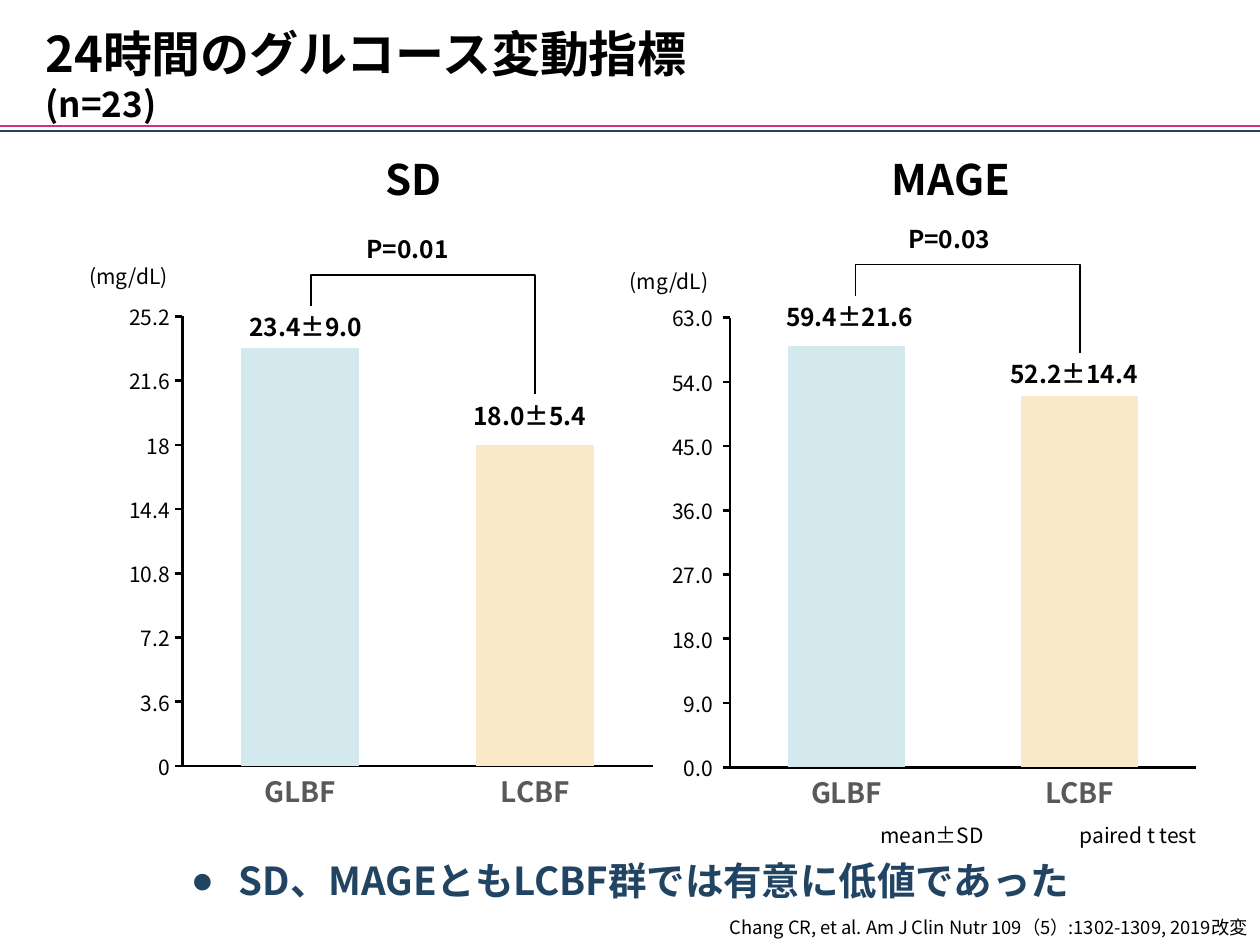
from lxml import etree
from pptx import Presentation
from pptx.chart.data import CategoryChartData
from pptx.dml.color import RGBColor
from pptx.enum.chart import XL_CHART_TYPE, XL_TICK_MARK
from pptx.enum.shapes import MSO_CONNECTOR
from pptx.enum.text import MSO_ANCHOR, MSO_AUTO_SIZE, PP_ALIGN
from pptx.oxml import parse_xml
from pptx.oxml.ns import nsdecls, qn
from pptx.util import Inches, Pt

COLUMN = XL_CHART_TYPE.COLUMN_CLUSTERED
NO_TICK, TICK_OUT = XL_TICK_MARK.NONE, XL_TICK_MARK.OUTSIDE
STRAIGHT, ELBOW = MSO_CONNECTOR.STRAIGHT, MSO_CONNECTOR.ELBOW
LEFT, CENTER, RIGHT = PP_ALIGN.LEFT, PP_ALIGN.CENTER, PP_ALIGN.RIGHT
TOP, MIDDLE = MSO_ANCHOR.TOP, MSO_ANCHOR.MIDDLE
FIT = MSO_AUTO_SIZE.SHAPE_TO_FIT_TEXT

# Content
FONT = "Noto Sans CJK JP"
BLACK, NAVY, PINK, GREY = "000000", "224463", "D82B83", "595959"
BAR_COLORS = ["D4E9EE", "F9E9C8"]
GROUPS = ["GLBF", "LCBF"]
TITLE = [("24時間のグルコース変動指標", 28), ("(n=23)", 20)]
MESSAGE = "SD、MAGEともLCBF群では有意に低値であった"
SOURCE = "Chang CR, et al. Am J Clin Nutr 109（5）:1302-1309, 2019改変"
NOTES = [("mean±SD", 6.89, 1.03), ("paired t test", 8.47, 1.2)]

# "plot" is the left edge and width of the plot area as shares of the chart;
# "labels" are the value labels with their top edges
PANELS = [
    dict(name="SD", name_at=(2.96, 0.69), chart_at=(0.94, 2.3), plot=(0.117, 0.863),
         values=[23.4, 18], top=25.2, step=3.6, fmt="General",
         labels=[("23.4±9.0", 2.43), ("18.0±5.4", 3.13)], label_x=1.88, label_w=1.17,
         p="P=0.01", p_at=(2.81, 1.81), unit_at=(0.61, 2.04)),
    dict(name="MAGE", name_at=(6.98, 1.23), chart_at=(5.24, 2.31), plot=(0.128, 0.854),
         values=[59, 52], top=63, step=9, fmt=r"#,##0.0_);[Red]\(#,##0.0\)",
         labels=[("59.4±21.6", 2.35), ("52.2±14.4", 2.8)], label_x=6.14, label_w=1.3,
         p="P=0.03", p_at=(7.11, 1.73), unit_at=(4.9, 2.08)),
]
CHART_W, CHART_H = 4.33, 4.22
PLOT_Y, PLOT_H = 0.05, 0.846
BAR_GAP = 1.78       # distance between the two value labels
BRACKET_RISE = 0.25  # height of the bracket above the first label


def rgb(value):
    return RGBColor.from_string(value)


def style(font, size, color=BLACK, bold=False):
    font.size, font.bold = Pt(size), bold
    font.color.rgb = rgb(color)
    font.name = FONT
    etree.SubElement(font._rPr, qn("a:ea")).set("typeface", FONT)


def add_run(p, text, *look):
    r = p.add_run()
    r.text = text
    style(r.font, *look)


def place(shape, x, y, w, h):
    shape.left, shape.top, shape.width, shape.height = map(Inches, (x, y, w, h))


def set_frame(tf, wrap, anchor=TOP, align=LEFT):
    tf.word_wrap, tf.auto_size, tf.vertical_anchor = wrap, FIT, anchor
    p = tf.paragraphs[0]
    p.alignment = align
    p.space_before = Pt(0)
    return p


def add_text(s, text, x, y, w, h, size, bold=False, wrap=False, align=LEFT):
    tf = s.shapes.add_textbox(*map(Inches, (x, y, w, h))).text_frame
    add_run(set_frame(tf, wrap, align=align), text, size, BLACK, bold)


def add_line(s, kind, x1, y1, x2, y2, color, width):
    line = s.shapes.add_connector(kind, *map(Inches, (x1, y1, x2, y2)))
    line.line.color.rgb = rgb(color)
    line.line.width = Pt(width)
    etree.SubElement(line._element.spPr, qn("a:effectLst"))
    return line


def add_bracket(s, x, y1, y2):
    """Elbow turned by 270 degrees, rising above both of its ends."""
    drop = y2 - y1
    cx, cy = x + BAR_GAP / 2, (y1 + y2) / 2
    line = add_line(s, ELBOW, cx + drop / 2, cy - BAR_GAP / 2,
                    cx - drop / 2, cy + BAR_GAP / 2, BLACK, 1)
    line._element.spPr.find(qn("a:xfrm")).set("rot", str(270 * 60000))
    line._element.spPr.find(qn("a:prstGeom")).get_or_add_avLst()
    guides = line._element.spPr.find(qn("a:prstGeom")).find(qn("a:avLst"))
    gd = etree.SubElement(guides, qn("a:gd"))
    gd.set("name", "adj1")
    gd.set("fmla", f"val {round(-BRACKET_RISE / drop * 100000)}")


def set_plot_area(chart, x, w):
    area = chart._chartSpace.chart.plotArea
    for old in area.findall(qn("c:layout")):
        area.remove(old)
    sizes = "".join(f'<c:{k} val="{v}"/>' for k, v in
                    zip("xywh", (x, PLOT_Y, w, PLOT_H)))
    area.insert(0, parse_xml(
        f'<c:layout {nsdecls("c")}><c:manualLayout><c:layoutTarget val="inner"/>'
        f'<c:xMode val="edge"/><c:yMode val="edge"/>{sizes}</c:manualLayout></c:layout>'))


def add_bar_chart(s, panel):
    data = CategoryChartData()
    data.categories = GROUPS
    data.add_series("Series 1", panel["values"])
    box = map(Inches, (*panel["chart_at"], CHART_W, CHART_H))
    chart = s.shapes.add_chart(COLUMN, *box, data).chart
    chart.has_title = chart.has_legend = False
    chart.font.name, chart.font.size = "Calibri", Pt(10)
    chart.font.color.rgb = rgb(BLACK)
    set_plot_area(chart, *panel["plot"])

    plot = chart.plots[0]
    plot.gap_width, plot.overlap, plot.vary_by_categories = 100, -27, False
    for i, color in enumerate(BAR_COLORS):
        fill = plot.series[0].points[i].format.fill
        fill.solid()
        fill.fore_color.rgb = rgb(color)

    cat, val = chart.category_axis, chart.value_axis
    for axis, tick, look in ((cat, NO_TICK, (16, GREY, True)), (val, TICK_OUT, (12,))):
        axis.has_major_gridlines = False
        axis.major_tick_mark, axis.minor_tick_mark = tick, NO_TICK
        axis.format.line.color.rgb = rgb(BLACK)
        axis.format.line.width = Pt(1.5)
        style(axis.tick_labels.font, *look)
    val.minimum_scale, val.maximum_scale = 0, panel["top"]
    val.major_unit = panel["step"]
    val.tick_labels.number_format = panel["fmt"]
    val.tick_labels.number_format_is_linked = False


def add_panel(s, panel):
    add_bar_chart(s, panel)
    name_x, name_w = panel["name_at"]
    add_text(s, panel["name"], name_x, 1.17, name_w, 0.5, 24, True)
    x, w = panel["label_x"], panel["label_w"]
    for i, (text, y) in enumerate(panel["labels"]):
        add_text(s, text, x + i * BAR_GAP, y, w, 0.34, 14, True)
    add_bracket(s, x + w / 2, *(y for _, y in panel["labels"]))
    add_text(s, panel["p"], *panel["p_at"], 0.97, 0.34, 14, True)
    add_text(s, "(mg/dL)", *panel["unit_at"], 0.89, 0.3, 12)


def main():
    prs = Presentation()
    prs.slide_width, prs.slide_height = Inches(10), Inches(7.5)
    s = prs.slides.add_slide(prs.slide_layouts[1])

    # Title and double rule
    for y, color in ((1.04, NAVY), (1, PINK)):
        add_line(s, STRAIGHT, 0, y, 10, y, color, 1.5)
    title, body = s.placeholders
    place(title, 0.26, 0.3, 6.16, 0.57)
    p = set_frame(title.text_frame, False, MIDDLE)
    for i, (text, size) in enumerate(TITLE):
        if i:
            p.add_line_break()
        add_run(p, text, size, BLACK, True)

    # Charts with labels and significance brackets
    for panel in PANELS:
        add_panel(s, panel)
    for text, x, w in NOTES:
        add_text(s, text, x, 6.48, w, 0.3, 12)

    # Key message with a round bullet
    place(body, 0.14, 6.75, 9.72, 0.47)
    p = set_frame(body.text_frame, True, MIDDLE, CENTER)
    p_pr = p._p.get_or_add_pPr()
    p_pr.set("marL", str(Inches(0.38)))
    p_pr.set("indent", str(-Inches(0.38)))
    color = etree.SubElement(p_pr, qn("a:buClr"))
    etree.SubElement(color, qn("a:srgbClr")).set("val", NAVY)
    etree.SubElement(p_pr, qn("a:buChar")).set("char", "●")
    add_run(p, MESSAGE, 22, NAVY, True)

    # Source
    add_text(s, SOURCE, 4.66, 7.22, 5.34, 0.28, 10.5, wrap=True, align=RIGHT)
    prs.save("out.pptx")


if __name__ == "__main__":
    main()
